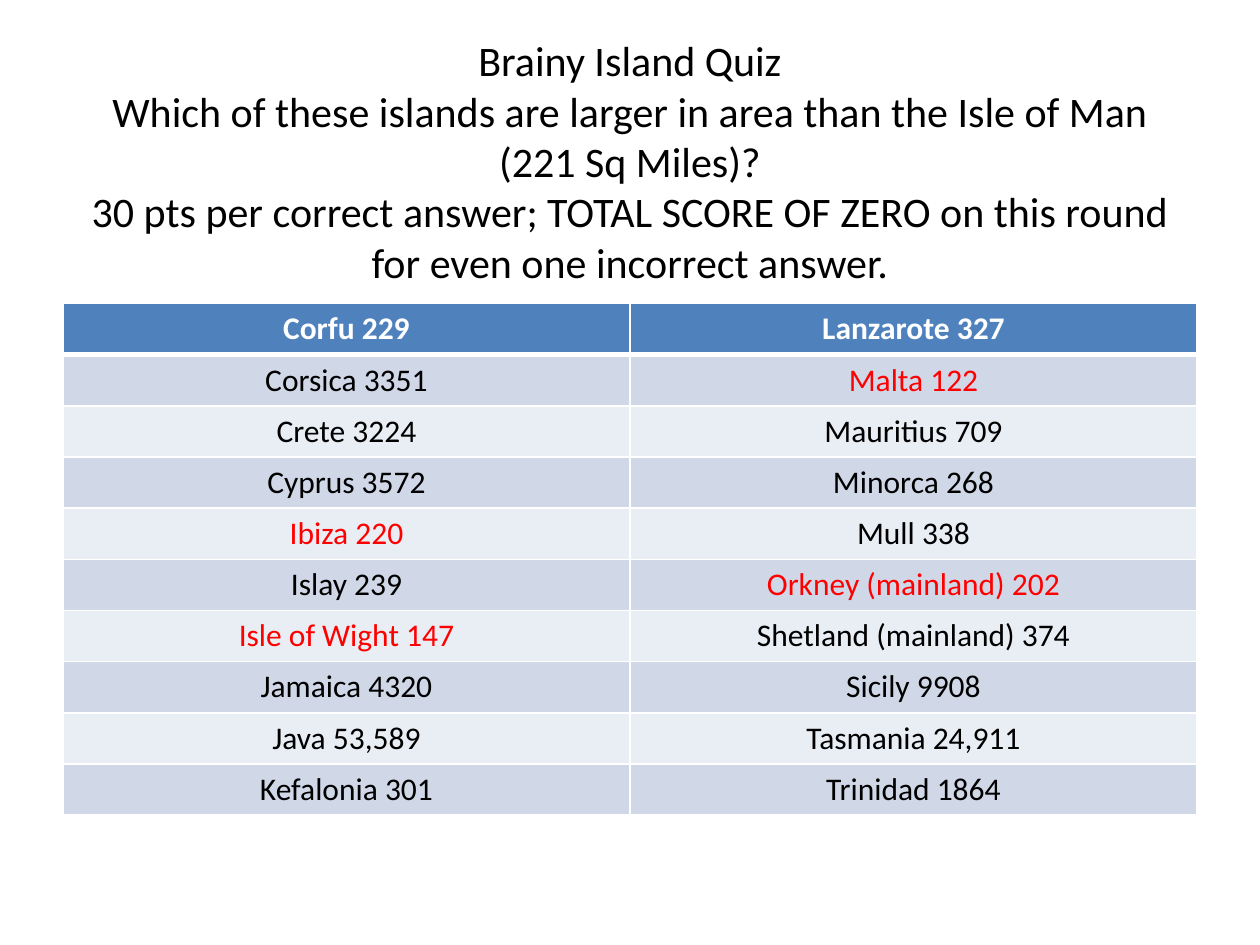
"""Build the island area quiz slide with its answer table."""
from copy import deepcopy
from dataclasses import dataclass

from lxml import etree
from pptx import Presentation
from pptx import util as u
from pptx.dml.color import RGBColor
from pptx.enum import text
from pptx.oxml.ns import qn

HUES = {"head": "4F81BD", "odd": "D0D8E8", "even": "E9EDF4",
        "white": "FFFFFF", "black": "000000", "red": "FF0000"}
LIMIT = 221


@dataclass
class Isle:
    name: str
    area: str

    @property
    def small(self) -> bool:
        return int(self.area.replace(",", "")) < LIMIT


LEFT = [Isle("Corfu", "229"), Isle("Corsica", "3351"), Isle("Crete", "3224"),
        Isle("Cyprus", "3572"), Isle("Ibiza", "220"), Isle("Islay", "239"),
        Isle("Isle of Wight", "147"), Isle("Jamaica", "4320"),
        Isle("Java", "53,589"), Isle("Kefalonia", "301")]
RIGHT = [Isle("Lanzarote", "327"), Isle("Malta", "122"), Isle("Mauritius", "709"),
         Isle("Minorca", "268"), Isle("Mull", "338"),
         Isle("Orkney (mainland)", "202"), Isle("Shetland (mainland)", "374"),
         Isle("Sicily", "9908"), Isle("Tasmania", "24,911"),
         Isle("Trinidad", "1864")]
TITLE = ("Brainy Island Quiz",
         f"Which of these islands are larger in area than the Isle of Man ({LIMIT} Sq Miles)?",
         "30 pts per correct answer; TOTAL SCORE OF ZERO on this round "
         "for even one incorrect answer.")


def style(para, size: int, hue: str, bold: bool = False) -> None:
    para.alignment = text.PP_ALIGN.CENTER
    for run in para.runs:
        font = run.font
        font.name, font.size, font.bold = "Calibri", u.Pt(size), bold
        font.color.rgb = RGBColor.from_string(HUES[hue])


def draw_title(slide) -> None:
    title = slide.shapes.title
    title.left, title.top = u.Inches(0.5), u.Inches(0.3)
    title.width, title.height = u.Inches(9), u.Inches(1.95)
    frame = title.text_frame
    frame.text = "\v".join(TITLE)
    frame.auto_size = text.MSO_AUTO_SIZE.NONE
    frame.vertical_anchor = text.MSO_ANCHOR.MIDDLE
    para = frame.paragraphs[0]
    style(para, 24, "black")
    for gap in para._p.findall(qn("a:br")):
        gap.append(deepcopy(para.runs[0]._r.rPr))


def rule_off(cell) -> None:
    line = etree.Element(qn("a:lnB"), w=str(u.Pt(3)))
    fill = etree.SubElement(line, qn("a:solidFill"))
    etree.SubElement(fill, qn("a:srgbClr"), val=HUES["white"])
    cell._tc.get_or_add_tcPr().insert(0, line)


def draw_cell(cell, isle: Isle, row: int) -> None:
    head = row == 0
    cell.fill.solid()
    band = "head" if head else "odd" if row % 2 else "even"
    cell.fill.fore_color.rgb = RGBColor.from_string(HUES[band])
    cell.text_frame.text = f"{isle.name} {isle.area}"
    hue = "white" if head else "red" if isle.small else "black"
    style(cell.text_frame.paragraphs[0], 18, hue, head)
    if head:
        rule_off(cell)


def draw_table(slide) -> None:
    rows = len(LEFT)
    table = slide.shapes.add_table(rows, 2, u.Inches(0.5), u.Inches(2.41),
                                   u.Inches(9), u.Inches(4.06)).table
    for row, pair in enumerate(zip(LEFT, RIGHT)):
        for col, isle in enumerate(pair):
            draw_cell(table.cell(row, col), isle, row)


def main() -> None:
    deck = Presentation()
    deck.slide_width, deck.slide_height = u.Inches(10), u.Inches(7.5)
    slide = deck.slides.add_slide(deck.slide_layouts[5])
    draw_title(slide)
    draw_table(slide)
    deck.save("out.pptx")


if __name__ == "__main__":
    main()
